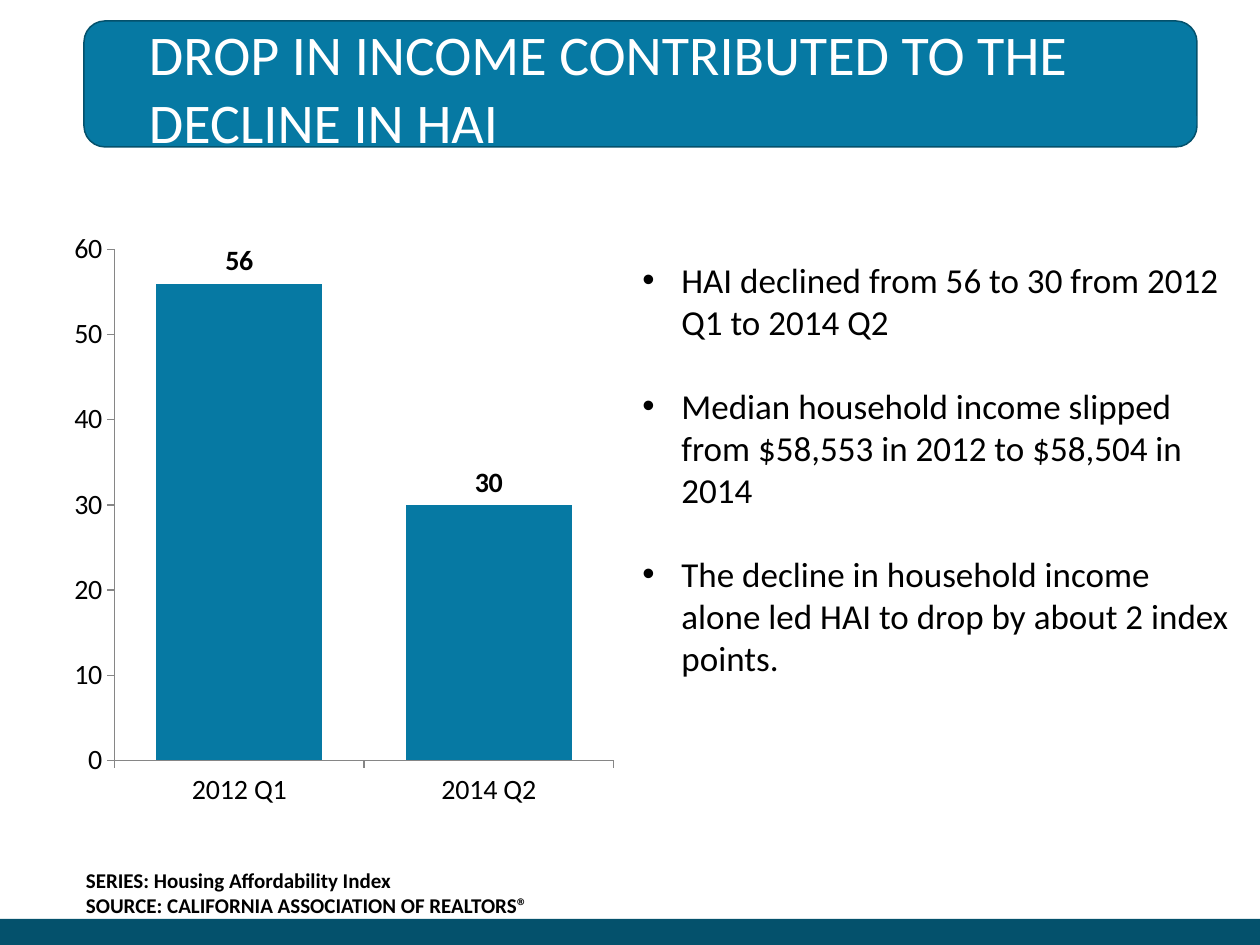
from lxml.etree import SubElement
from pptx import Presentation
from pptx.chart.data import CategoryChartData
from pptx.dml.color import RGBColor
from pptx.enum.chart import XL_CHART_TYPE as ChartType
from pptx.enum.chart import XL_LABEL_POSITION as LabelPosition
from pptx.enum.chart import XL_TICK_MARK as TickMark
from pptx.enum.shapes import MSO_SHAPE as Shape
from pptx.oxml.ns import qn
from pptx.util import Inches, Pt

COLORS = {
    "band": "04516C",
    "accent": "0679A3",
    "title": "FFFFFF",
    "text": "000000",
    "axis": "868686",
}
FONT = "Calibri"
COLUMNS, ROWS = 120, 90


def color(name):
    return RGBColor.from_string(COLORS[name])


class SlideBuilder:
    """Places styled elements on a grid of 120 columns by 90 rows."""

    def __init__(self, presentation):
        self.column = presentation.slide_width / COLUMNS
        self.row = presentation.slide_height / ROWS
        self.slide = presentation.slides.add_slide(presentation.slide_layouts[6])

    def place(self, left, top, width, height):
        return [round(value) for value in (left * self.column, top * self.row,
                                           width * self.column, height * self.row)]

    def style_font(self, font, size, name="text", bold=False):
        for attribute, value in {"name": FONT, "size": Pt(size), "bold": bold}.items():
            setattr(font, attribute, value)
        font.color.rgb = color(name)

    def panel(self, kind, area, fill, line=None):
        shape = self.slide.shapes.add_shape(kind, *self.place(*area))
        shape.shadow.inherit = False
        shape.fill.solid()
        shape.fill.fore_color.rgb = color(fill)
        if line:
            shape.line.color.rgb = color(line)
            shape.line.width = Pt(0.85)
        else:
            shape.line.fill.background()

    def text(self, area, lines, size, name="text", bold=False, bullets=False):
        frame = self.slide.shapes.add_textbox(*self.place(*area)).text_frame
        frame.word_wrap = True
        for index, line in enumerate(lines):
            paragraph = frame.add_paragraph() if index else frame.paragraphs[0]
            if bullets:
                self.add_bullet(paragraph)
                if index:
                    paragraph.space_before = Pt(24)
            run = paragraph.add_run()
            run.text = line
            self.style_font(run.font, size, name, bold)

    def add_bullet(self, paragraph):
        properties = paragraph._p.get_or_add_pPr()
        indent = Inches(0.31)
        properties.set("marL", str(indent))
        properties.set("indent", str(-indent))
        SubElement(properties, qn("a:buFont")).set("typeface", "Arial")
        SubElement(properties, qn("a:buChar")).set("char", "•")

    def column_chart(self, area, categories, series_name, values):
        data = CategoryChartData()
        data.categories = categories
        data.add_series(series_name, values)
        chart = self.slide.shapes.add_chart(
            ChartType.COLUMN_CLUSTERED, *self.place(*area), data).chart
        chart.has_legend = chart.has_title = False
        self.style_font(chart.font, 16)

        value_axis = chart.value_axis
        scale = {"minimum_scale": 0, "maximum_scale": 60, "major_unit": 10,
                 "has_major_gridlines": False}
        for attribute, value in scale.items():
            setattr(value_axis, attribute, value)
        for axis in (chart.category_axis, value_axis):
            axis.major_tick_mark = TickMark.OUTSIDE
            axis.format.line.color.rgb = color("axis")
            self.style_font(axis.tick_labels.font, 16)

        plot = chart.plots[0]
        plot.gap_width = 50
        plot.vary_by_categories = False
        fill = plot.series[0].format.fill
        fill.solid()
        fill.fore_color.rgb = color("accent")
        plot.has_data_labels = True
        labels = plot.data_labels
        labels.show_value = True
        labels.position = LabelPosition.OUTSIDE_END
        self.style_font(labels.font, 16, bold=True)


def main():
    presentation = Presentation()
    presentation.slide_width = Inches(10)
    presentation.slide_height = Inches(7.5)
    builder = SlideBuilder(presentation)

    builder.panel(Shape.RECTANGLE, (0, 87.5, COLUMNS, 2.5), "band")
    builder.panel(Shape.FLOWCHART_ALTERNATE_PROCESS, (8, 2, 106, 12), "accent", "band")
    builder.text((13, 1.3, 106, 13),
                 ["DROP IN INCOME CONTRIBUTED TO THE DECLINE IN HAI"], 32, "title")
    builder.column_chart((6, 21, 53.5, 57), ["2012 Q1", "2014 Q2"],
                         "Housing Affordability Index", [56, 30])
    builder.text((60, 24, 59, 50), [
        "HAI declined from 56 to 30 from 2012 Q1 to 2014 Q2",
        "Median household income slipped from $58,553 in 2012 to $58,504 in 2014",
        "The decline in household income alone led HAI to drop by about 2 index points.",
    ], 20, bullets=True)
    builder.text((7, 82, 110, 6), [
        "SERIES: Housing Affordability Index",
        "SOURCE: CALIFORNIA ASSOCIATION OF REALTORS®",
    ], 12, bold=True)
    presentation.save("out.pptx")


if __name__ == "__main__":
    main()
